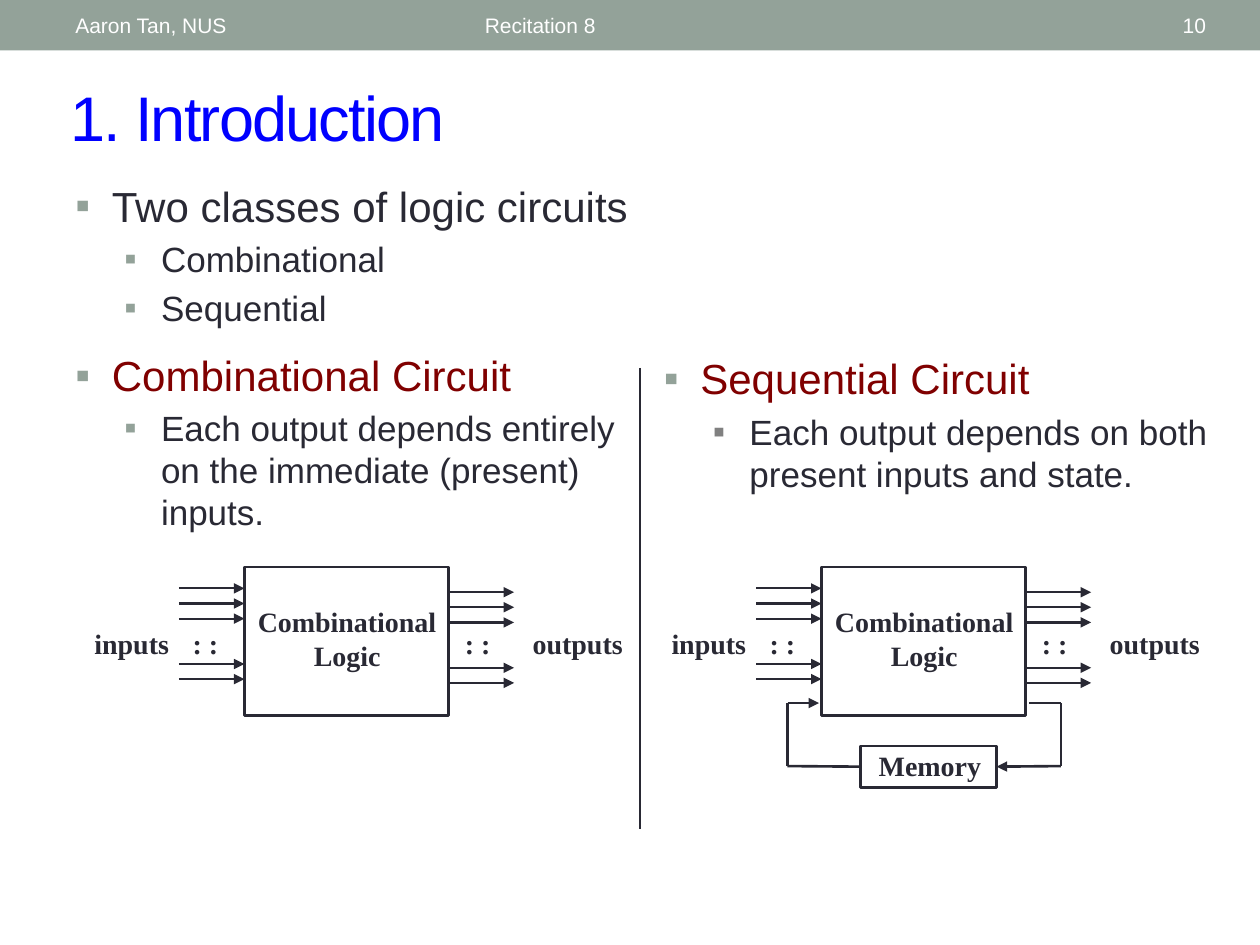
from lxml import etree
from pptx import Presentation
from pptx.dml.color import RGBColor
from pptx.enum.shapes import MSO_CONNECTOR as CONN, MSO_SHAPE as SHAPE
from pptx.enum.text import MSO_ANCHOR as ANCHOR, PP_ALIGN as ALIGN
from pptx.oxml.ns import qn
from pptx.util import Inches, Pt

SAGE = RGBColor(0x93, 0xA2, 0x99)
GRAY = RGBColor(0x80, 0x80, 0x80)
INK = RGBColor(0x29, 0x29, 0x34)
MAROON = RGBColor(0x80, 0x00, 0x00)
BLUE = RGBColor(0x00, 0x00, 0xFF)
WHITE = RGBColor(0xFF, 0xFF, 0xFF)

HEADER = dict(size=Pt(12), color=WHITE, name="Arial")
TITLE = dict(size=Pt(36), color=BLUE, name="Arial")
LABEL = dict(size=Pt(16), color=INK, name="Times New Roman", bold=True)


def set_font(font, formats):
    for key, value in formats.items():
        if key == "color":
            font.color.rgb = value
        else:
            setattr(font, key, value)


def add_text(shapes, box, lines, formats, align=ALIGN.LEFT,
             anchor=ANCHOR.TOP, margins=(0.1, 0.05)):
    sp = shapes.add_textbox(*map(Inches, box))
    tf = sp.text_frame
    tf.word_wrap = True
    tf.vertical_anchor = anchor
    tf.margin_left = tf.margin_right = Inches(margins[0])
    tf.margin_top = tf.margin_bottom = Inches(margins[1])
    for i, line in enumerate(lines):
        p = tf.add_paragraph() if i else tf.paragraphs[0]
        p.alignment = align
        r = p.add_run()
        r.text = line
        set_font(r.font, formats)
    return sp


def add_label(shapes, box, lines, margins=(0.1, 0.05)):
    return add_text(shapes, box, lines, LABEL, ALIGN.CENTER, margins=margins)


def add_bullets(shapes, box, items):
    """Each item is (level, text, text colour, bullet colour, space before)."""
    sp = add_text(shapes, box, [item[1] for item in items], {})
    for p, (level, _, color, bullet, space) in zip(sp.text_frame.paragraphs, items):
        p.level = level
        p.space_before = Pt(space)
        set_font(p.runs[0].font,
                 dict(size=Pt(20 if level else 24), color=color, name="Arial"))
        ppr = p._p.get_or_add_pPr()
        ppr.set("marL", str(Inches(0.68 if level else 0.29)))
        ppr.set("indent", str(Inches(-0.29)))
        clr = etree.SubElement(ppr, qn("a:buClr"))
        etree.SubElement(clr, qn("a:srgbClr"), val=str(bullet))
        etree.SubElement(ppr, qn("a:buFont"), typeface="Arial")
        etree.SubElement(ppr, qn("a:buChar"), char="▪")


def add_rect(shapes, box, fill=None, line=None):
    sp = shapes.add_shape(SHAPE.RECTANGLE, *map(Inches, box))
    sp.shadow.inherit = False
    if fill is None:
        sp.fill.background()
    else:
        sp.fill.solid()
        sp.fill.fore_color.rgb = fill
    if line is None:
        sp.line.fill.background()
    else:
        sp.line.color.rgb = line
        sp.line.width = Pt(1.5)
    return sp


def add_line(shapes, start, end, width=1.25, arrow=True):
    cn = shapes.add_connector(CONN.STRAIGHT, *map(Inches, (*start, *end)))
    cn.line.color.rgb = INK
    cn.line.width = Pt(width)
    if arrow:
        etree.SubElement(cn.line._get_or_add_ln(), qn("a:tailEnd"), type="triangle")
    etree.SubElement(cn._element.spPr, qn("a:effectLst"))
    return cn


def add_logic(shapes, x):
    """Combinational block with its inputs and outputs; x is the left edge."""
    add_label(shapes, (x + 1.25, 4.75, 1.67, 0.64), ["Combinational", "Logic"])
    add_rect(shapes, (x + 1.27, 4.5, 1.62, 1.18), line=INK)
    for left, top in ((0.75, 4.67), (2.89, 4.7)):
        for slot in (0, 1, 2, 5, 6):
            y = top + 0.12 * slot
            add_line(shapes, (x + left, y), (x + left + 0.52, y))
    for left, width, text, inset in ((0, 0.75, "inputs", 0.01),
                                     (0.75, 0.42, ": :", 0.1),
                                     (2.91, 0.42, ": :", 0.1),
                                     (3.5, 0.83, "outputs", 0.01)):
        add_label(shapes, (x + left, 4.92, width, 0.37), [text], (inset, 0.05))


def add_memory(shapes):
    """Memory block and its feedback loop."""
    box = add_rect(shapes, (6.83, 5.92, 1.08, 0.33), line=INK)
    add_label(shapes, (6.92, 5.93, 0.92, 0.29), ["Memory"], (0.01, 0.01))
    # From the logic block into the memory
    add_line(shapes, (8.17, 5.58), (8.42, 5.58), 1.5, False)
    add_line(shapes, (8.42, 5.58), (8.42, 6.08), 1.5, False)
    add_line(shapes, (8.42, 6.08), (7.91, 6.08), 1.5).end_connect(box, 3)
    # From the memory back to the logic block
    add_line(shapes, (6.83, 6.08), (6.25, 6.08), 1.5, False).begin_connect(box, 1)
    add_line(shapes, (6.25, 6.08), (6.25, 5.58), 1.5, False)
    add_line(shapes, (6.25, 5.58), (6.5, 5.58), 1.5)


def add_header(shapes):
    add_rect(shapes, (0, 0, 10, 0.4), fill=SAGE)
    for left, width, text, align in ((0.5, 3.17, "Aaron Tan, NUS", ALIGN.LEFT),
                                     (3.75, 4.5, "Recitation 8", ALIGN.LEFT),
                                     (8.72, 0.95, "10", ALIGN.RIGHT)):
        add_text(shapes, (left, 0.02, width, 0.36), [text], HEADER, align,
                 ANCHOR.MIDDLE)


def main():
    prs = Presentation()
    prs.slide_width, prs.slide_height = Inches(10), Inches(7.5)
    shapes = prs.slides.add_slide(prs.slide_layouts[6]).shapes

    # Header and title
    add_header(shapes)
    title = add_text(shapes, (0.46, 0.57, 9.07, 0.7), ["1. Introduction"], TITLE,
                     anchor=ANCHOR.MIDDLE)
    title.text_frame.paragraphs[0].runs[0].font._element.set("spc", "-100")

    # Bullet lists and the divider between the columns
    add_bullets(shapes, (0.5, 1.38, 4.83, 5.37), [
        (0, "Two classes of logic circuits", INK, SAGE, 0),
        (1, "Combinational", INK, SAGE, 4),
        (1, "Sequential", INK, SAGE, 4),
        (0, "Combinational Circuit", MAROON, SAGE, 12),
        (1, "Each output depends entirely on the immediate (present) inputs.",
         INK, SAGE, 4),
    ])
    add_bullets(shapes, (5.17, 2.75, 4.67, 1.67), [
        (0, "Sequential Circuit", MAROON, SAGE, 0),
        (1, "Each output depends on both present inputs and state.",
         INK, GRAY, 4),
    ])
    add_line(shapes, (5.08, 2.92), (5.08, 6.58), 0.75, False)

    # Circuit diagrams
    add_logic(shapes.add_group_shape().shapes, 0.67)
    sequential = shapes.add_group_shape().shapes
    add_logic(sequential, 5.25)
    add_memory(sequential)

    prs.save("out.pptx")


if __name__ == "__main__":
    main()
